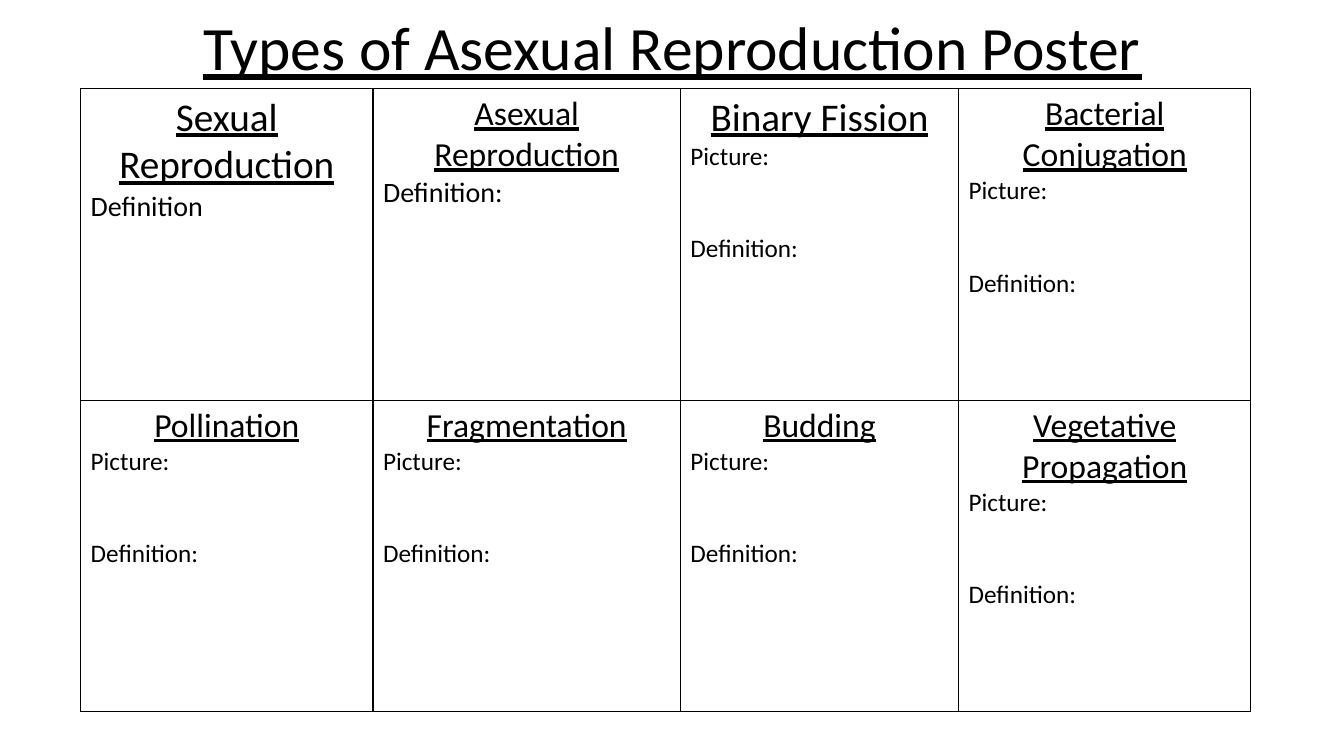
from dataclasses import dataclass

from lxml.etree import SubElement as Sub
from pptx import Presentation
from pptx.dml.color import RGBColor as Color
from pptx.enum.text import MSO_ANCHOR as Anchor, MSO_AUTO_SIZE as Fit, PP_ALIGN as Align
from pptx.oxml.ns import qn
from pptx.util import Pt

TITLE = "Types of Asexual Reproduction Poster"
BOTH = ("Picture:", "Definition:")
# Each cell: heading, heading size, prompts
ROWS = [
    [
        ("Sexual Reproduction", "large", ("Definition",)),
        ("Asexual Reproduction", "head", ("Definition:",)),
        ("Binary Fission", "large", BOTH),
        ("Bacterial Conjugation", "head", BOTH),
    ],
    [
        ("Pollination", "head", BOTH),
        ("Fragmentation", "head", BOTH),
        ("Budding", "head", BOTH),
        ("Vegetative Propagation", "head", BOTH),
    ],
]


@dataclass(frozen=True)
class Theme:
    font: str = "Calibri"
    ink: str = "000000"
    title: int = 44
    large: int = 28
    head: int = 24
    lead: int = 20
    body: int = 18
    rule: int = 1


THEME = Theme()
PAGE = (960, 540)
TITLE_BOX = (66.24, -15.84, 828, 104.4)
LEFT, TOP = 57.6, 63.36
WIDTHS = (208.8, 219.6, 198.72, 208.8)
HEIGHT = 222.48
GAP = 44  # room left for the drawing above "Definition:"


def write(para, text, size, under=False, align=Align.LEFT, before=0, line=1.0):
    para.alignment = align
    para.space_before = Pt(before)
    para.line_spacing = line
    run = para.add_run()
    run.text = text
    font = run.font
    font.name, font.size = THEME.font, Pt(size)
    font.underline, font.bold = under, False
    font.color.rgb = Color.from_string(THEME.ink)


def frame(cell):
    """Rule all four sides of a cell and clear its fill."""
    props = cell._tc.get_or_add_tcPr()
    for side in ("lnL", "lnR", "lnT", "lnB"):
        edge = Sub(props, qn(f"a:{side}"), w=str(Pt(THEME.rule)))
        Sub(Sub(edge, qn("a:solidFill")), qn("a:srgbClr"), val=THEME.ink)
    cell.fill.background()


def fill_cell(cell, head, size, prompts):
    frame(cell)
    text = cell.text_frame
    write(text.paragraphs[0], head, getattr(THEME, size), under=True, align=Align.CENTER)
    prompt_size = THEME.lead if len(prompts) == 1 else THEME.body
    for order, prompt in enumerate(prompts):
        write(text.add_paragraph(), prompt, prompt_size, before=GAP * order)


def add_title(slide):
    title = slide.shapes.title
    title.left, title.top, title.width, title.height = map(Pt, TITLE_BOX)
    text = title.text_frame
    text.word_wrap = True
    text.auto_size = Fit.NONE
    text.vertical_anchor = Anchor.MIDDLE
    write(text.paragraphs[0], TITLE, THEME.title, under=True, align=Align.CENTER, line=0.9)


def add_grid(slide):
    size = (len(ROWS), len(WIDTHS))
    box = map(Pt, (LEFT, TOP, sum(WIDTHS), HEIGHT * len(ROWS)))
    table = slide.shapes.add_table(*size, *box).table
    table.first_row = table.horz_banding = False
    for col, width in zip(table.columns, WIDTHS):
        col.width = Pt(width)
    for row, items in zip(table.rows, ROWS):
        row.height = Pt(HEIGHT)
        for cell, item in zip(row.cells, items):
            fill_cell(cell, *item)


def main():
    deck = Presentation()
    deck.slide_width, deck.slide_height = map(Pt, PAGE)
    slide = deck.slides.add_slide(deck.slide_layouts[5])
    add_title(slide)
    add_grid(slide)
    deck.save("out.pptx")


if __name__ == "__main__":
    main()
